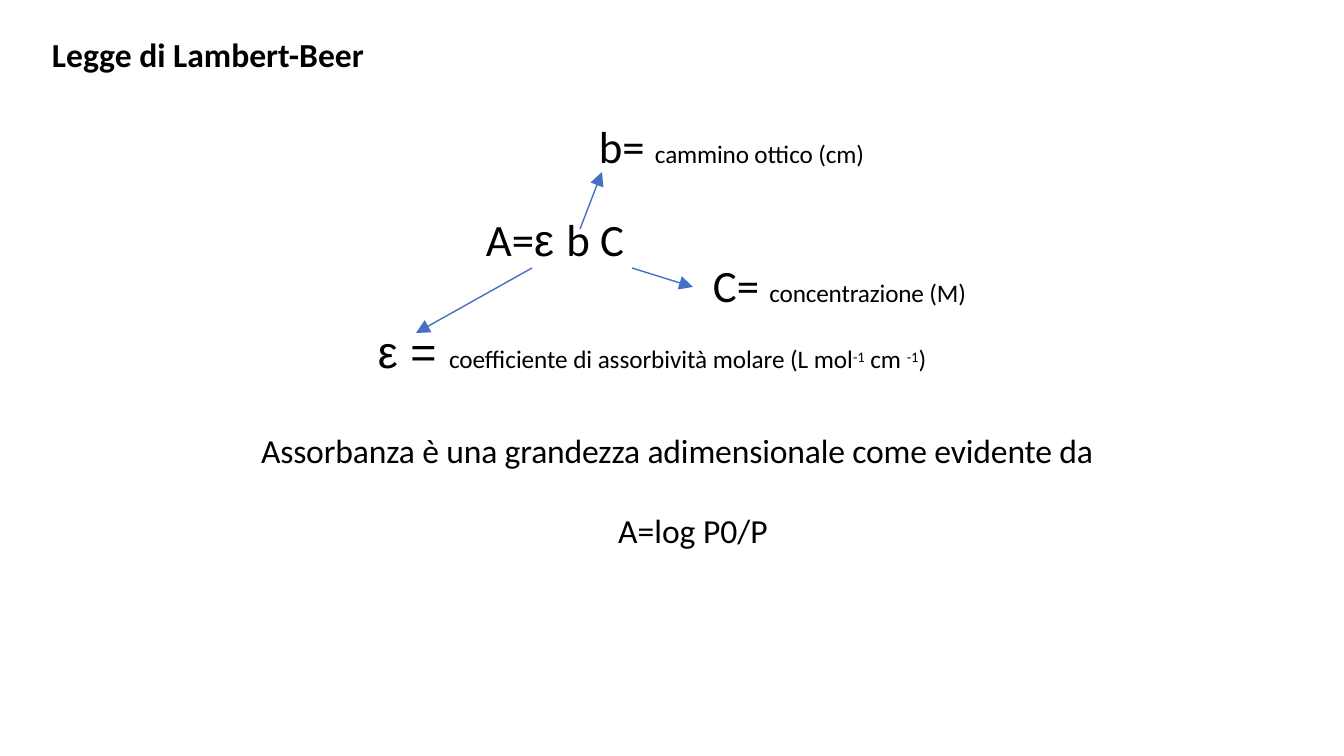
from lxml.etree import SubElement
from pptx import Presentation
from pptx.dml.color import RGBColor
from pptx.enum.shapes import MSO_CONNECTOR as CONNECTOR
from pptx.enum.text import MSO_ANCHOR as ANCHOR, PP_ALIGN as ALIGN
from pptx.oxml.ns import qn
from pptx.util import Emu, Pt

EMU_PER_PX = 914400 / 100.8
COLORS = {"text": "000000", "arrow": "4471C4"}
SYMBOL, NOTE, STATEMENT = 32, 18, 24


def px(length):
    return Emu(round(length * EMU_PER_PX))


def color(name):
    return RGBColor.from_string(COLORS[name])


def set_frame(shape, left, top, width, height):
    """Place a text shape and strip its margins."""
    shape.left, shape.top = px(left), px(top)
    shape.width, shape.height = px(width), px(height)
    frame = shape.text_frame
    frame.word_wrap = True
    frame.vertical_anchor = ANCHOR.TOP
    frame.margin_left = frame.margin_right = 0
    frame.margin_top = frame.margin_bottom = 0
    return frame


def add_frame(slide, *box):
    return set_frame(slide.shapes.add_textbox(0, 0, 0, 0), *box)


def add_run(paragraph, text, size, font="Calibri", bold=False, spacing=0, raised=False):
    """Add a run; spacing is in hundredths of a point."""
    run = paragraph.add_run()
    run.text = text
    run.font.name = font
    run.font.size = Pt(size)
    run.font.bold = bold
    run.font.color.rgb = color("text")
    properties = run.font._element
    if spacing:
        properties.set("spc", str(spacing))
    if raised:
        properties.set("baseline", "25000")


def format_paragraph(paragraph, indent=1, before=0, line=None, align=ALIGN.LEFT):
    paragraph.alignment = align
    paragraph.space_before = Pt(before)
    if line:
        paragraph.line_spacing = Pt(line)
    properties = paragraph._p.get_or_add_pPr()
    properties.set("marL", str(px(indent)))
    properties.set("indent", "0")


def add_arrow(slide, start, end):
    arrow = slide.shapes.add_connector(CONNECTOR.STRAIGHT, *map(px, start + end))
    arrow.line.color.rgb = color("arrow")
    arrow.line.width = Pt(1)
    SubElement(arrow.line._get_or_add_ln(), qn("a:tailEnd"), type="triangle", w="lg", len="lg")
    SubElement(arrow._element.spPr, qn("a:effectLst"))


def add_heading(slide):
    heading = set_frame(slide.shapes.title, 51, 34, 320, 42).paragraphs[0]
    format_paragraph(heading)
    add_run(heading, "Legge di Lambert-Beer", STATEMENT, bold=True)


def add_path_length(slide):
    path_length = add_frame(slide, 598, 119, 275, 55).paragraphs[0]
    format_paragraph(path_length)
    add_run(path_length, "b= ", SYMBOL)
    add_run(path_length, "cammino ottico (cm)", NOTE, spacing=-10)


def add_equation(slide):
    frame = add_frame(slide, 372, 219, 601, 160)
    equation = frame.paragraphs[0]
    format_paragraph(equation, indent=114, line=33.2)
    add_run(equation, "A=", SYMBOL, spacing=-10)
    add_run(equation, "ε ", SYMBOL, "Arial", spacing=-10)
    add_run(equation, "b C", SYMBOL)

    concentration = frame.add_paragraph()
    format_paragraph(concentration, indent=341, line=33.2)
    add_run(concentration, "C= ", SYMBOL)
    add_run(concentration, "concentrazione (M)", NOTE, spacing=-10)

    absorptivity = frame.add_paragraph()
    format_paragraph(absorptivity, indent=6, before=8.4)
    add_run(absorptivity, "ε = ", SYMBOL, "Arial")
    for text, raised in (
        ("coefficiente di assorbività molare (L mol", False),
        ("-1", True),
        (" cm ", False),
        ("-1", True),
        (")", False),
    ):
        add_run(absorptivity, text, NOTE, spacing=-5, raised=raised)


def add_conclusion(slide):
    frame = add_frame(slide, 260, 430, 850, 122)
    statement = frame.paragraphs[0]
    format_paragraph(statement)
    add_run(statement, "Assorbanza è una grandezza adimensionale come evidente da",
            STATEMENT, spacing=-10)

    formula = frame.add_paragraph()
    format_paragraph(formula, indent=16, before=28, align=ALIGN.CENTER)
    add_run(formula, "A=log P0/P", STATEMENT)


def main():
    deck = Presentation()
    deck.slide_width, deck.slide_height = px(1344), px(756)
    slide = deck.slides.add_slide(deck.slide_layouts[5])
    add_heading(slide)
    add_path_length(slide)
    add_equation(slide)
    for start, end in (
        ((532, 268), (416, 333)),
        ((580, 229), (602, 172)),
        ((632, 268), (693, 287)),
    ):
        add_arrow(slide, start, end)
    add_conclusion(slide)
    deck.save("out.pptx")


if __name__ == "__main__":
    main()
